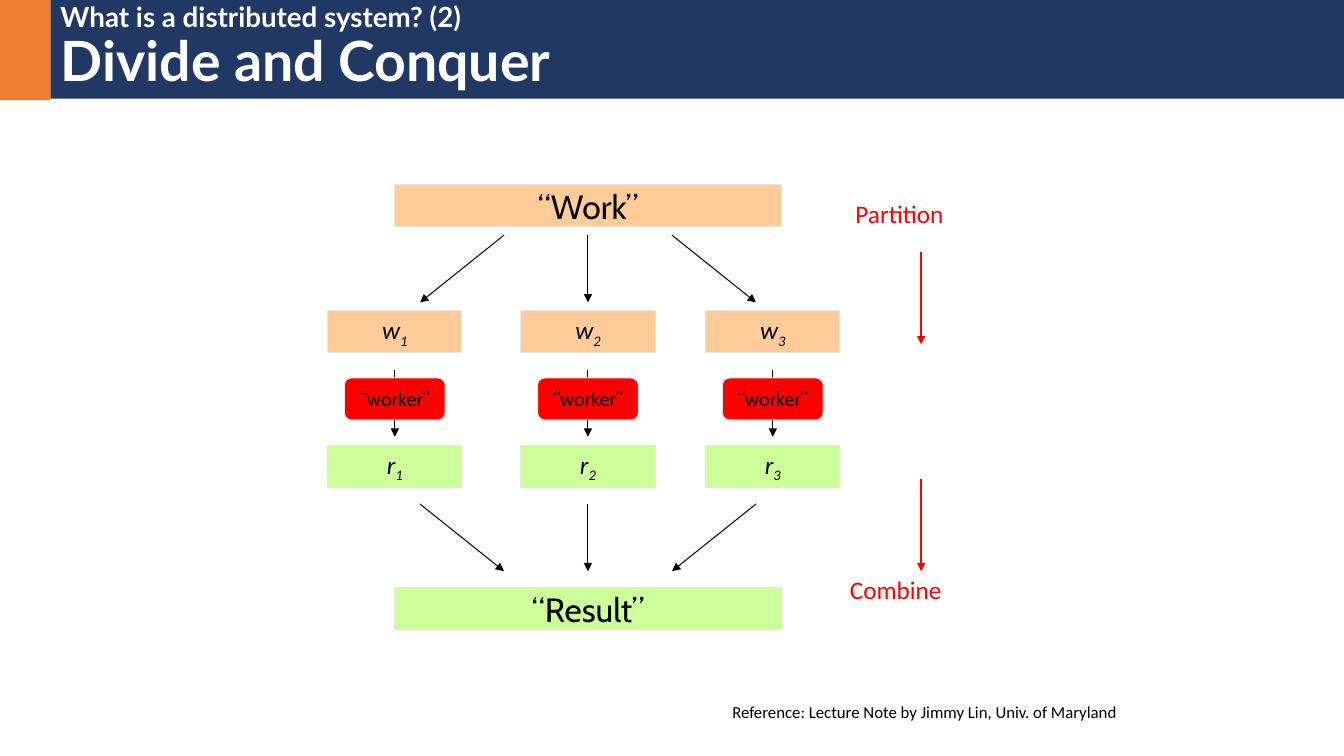
from dataclasses import dataclass

from lxml import etree
from pptx import Presentation
from pptx.dml.color import RGBColor
from pptx.enum.shapes import MSO_CONNECTOR, MSO_SHAPE
from pptx.enum.text import MSO_ANCHOR, MSO_AUTO_SIZE, PP_ALIGN
from pptx.oxml.ns import qn
from pptx.util import Pt

RECT, ROUNDED = MSO_SHAPE.RECTANGLE, MSO_SHAPE.ROUNDED_RECTANGLE
STRAIGHT = MSO_CONNECTOR.STRAIGHT
LEFT, CENTER = PP_ALIGN.LEFT, PP_ALIGN.CENTER
TOP, MIDDLE, BOTTOM = MSO_ANCHOR.TOP, MSO_ANCHOR.MIDDLE, MSO_ANCHOR.BOTTOM
NO_AUTOFIT = MSO_AUTO_SIZE.NONE


@dataclass(frozen=True)
class Theme:
    navy: str = "203864"
    orange: str = "ED7D31"
    work: str = "FFCC99"
    result: str = "CCFF99"
    red: str = "FF0000"
    border: str = "E7E6E6"
    black: str = "000000"
    white: str = "FFFFFF"
    title_font: str = "Lato"
    quote_font: str = "Cabin"
    body_font: str = "Calibri"
    title: float = 39.6
    kicker: float = 19.8
    block: float = 24
    label: float = 18
    worker: float = 14
    note: float = 12


THEME = Theme()
SLIDE_W, SLIDE_H = 960, 540
BLOCK_H = 30


def add_run(paragraph, text, color, **formats):
    run = paragraph.add_run()
    run.text = text
    run.font.color.rgb = RGBColor.from_string(color)
    for attribute, value in formats.items():
        setattr(run.font, attribute, value)
    return run


def add_block(slide, box, fill, kind=RECT, border=THEME.border):
    block = slide.shapes.add_shape(kind, *map(Pt, box))
    block.shadow.inherit = False
    block.fill.solid()
    block.fill.fore_color.rgb = RGBColor.from_string(fill)
    if border:
        block.line.color.rgb = RGBColor.from_string(border)
        block.line.width = Pt(0.75)
    else:
        block.line.fill.background()
    frame = block.text_frame
    frame.vertical_anchor = MIDDLE
    frame.paragraphs[0].alignment = CENTER
    return frame.paragraphs[0]


def add_quote(slide, box, text, fill, size, kind=RECT):
    paragraph = add_block(slide, box, fill, kind)
    add_run(paragraph, text, THEME.black, name=THEME.quote_font, size=Pt(size))


def add_variable(slide, box, letter, index, fill):
    paragraph = add_block(slide, box, fill)
    style = {"name": THEME.body_font, "size": Pt(THEME.label), "italic": True}
    add_run(paragraph, letter, THEME.black, **style)
    subscript = add_run(paragraph, str(index), THEME.black, **style)
    subscript.font._element.set("baseline", "-25000")


def add_arrow(slide, start, end, color=THEME.black, width=0.75):
    arrow = slide.shapes.add_connector(STRAIGHT, *map(Pt, (*start, *end)))
    arrow.line.color.rgb = RGBColor.from_string(color)
    arrow.line.width = Pt(width)
    etree.SubElement(arrow.line._get_or_add_ln(), qn("a:tailEnd"), type="triangle")
    etree.SubElement(arrow._element.spPr, qn("a:effectLst"))


def add_label(slide, box, text, color, size, wrap=False):
    frame = slide.shapes.add_textbox(*map(Pt, box)).text_frame
    frame.word_wrap = wrap
    add_run(frame.paragraphs[0], text, color, name=THEME.body_font, size=Pt(size))


def build_header(slide, box, kicker, heading):
    left, top, width, height = box
    accent_w = 36
    add_block(slide, (left, top, accent_w, height + 1), THEME.orange, border=None)

    title = slide.shapes.title
    place = {"left": left + accent_w, "top": top,
             "width": width - accent_w, "height": height}
    for attribute, value in place.items():
        setattr(title, attribute, Pt(value))
    title.fill.solid()
    title.fill.fore_color.rgb = RGBColor.from_string(THEME.navy)
    frame = title.text_frame
    frame.auto_size = NO_AUTOFIT
    frame.vertical_anchor = BOTTOM
    paragraph = frame.paragraphs[0]
    paragraph.alignment = LEFT
    paragraph.line_spacing = 0.9
    style = {"name": THEME.title_font, "bold": True}
    add_run(paragraph, kicker, THEME.white, size=Pt(THEME.kicker), **style)
    paragraph.add_line_break()
    add_run(paragraph, heading, THEME.white, size=Pt(THEME.title), **style)


def build_flow(slide, box):
    left, top, width, height = box
    wide_x, wide_w = left + 48, 276
    column_w, worker_w = 96, 72
    work_y, part_y, worker_y, partial_y = top, top + 90, top + 138, top + 186
    result_y = top + height - BLOCK_H
    hub = wide_x + wide_w / 2

    # Whole work and whole result
    for y, text, fill in ((work_y, "“Work”", THEME.work),
                          (result_y, "“Result”", THEME.result)):
        add_quote(slide, (wide_x, y, wide_w, BLOCK_H), text, fill, THEME.block)

    # One column per worker
    for index, offset in enumerate((0, 138, 270), start=1):
        x = left + offset
        center = x + column_w / 2
        inner, outer = hub + (index - 2) * 60, hub + (index - 2) * 120
        add_variable(slide, (x, part_y, column_w, BLOCK_H), "w", index, THEME.work)
        add_variable(slide, (x, partial_y, column_w, BLOCK_H), "r", index, THEME.result)
        add_arrow(slide, (inner, work_y + 36), (outer, part_y - 6))
        add_arrow(slide, (center, part_y + 42), (center, partial_y - 6))
        add_arrow(slide, (outer, partial_y + 42), (inner, result_y - 12))
        add_quote(slide, (center - worker_w / 2, worker_y, worker_w, BLOCK_H),
                  "“worker”", THEME.red, THEME.worker, ROUNDED)


def build_phases(slide, box):
    left, top, width, height = box
    arrow_x, arrow_h = left + 58, 66
    label_h = 29
    add_label(slide, (left + 4, top, width - 4, label_h),
              "Partition", THEME.red, THEME.label)
    add_label(slide, (left, top + height - label_h, width, label_h),
              "Combine", THEME.red, THEME.label)
    for y in (top + 42, top + 204):
        add_arrow(slide, (arrow_x, y), (arrow_x, y + arrow_h), THEME.red, 1.5)


def main():
    prs = Presentation()
    prs.slide_width, prs.slide_height = Pt(SLIDE_W), Pt(SLIDE_H)
    slide = prs.slides.add_slide(prs.slide_layouts[5])

    build_header(slide, (0, 0, SLIDE_W, 70.5),
                 "What is a distributed system? (2)", "Divide and Conquer")
    build_flow(slide, (234, 132, 366, 318))
    build_phases(slide, (600, 138, 82, 298))
    # Source credit
    add_label(slide, (516, 498, 300, 22),
              "Reference: Lecture Note by Jimmy Lin, Univ. of Maryland",
              THEME.black, THEME.note, wrap=True)

    prs.save("out.pptx")


if __name__ == "__main__":
    main()
